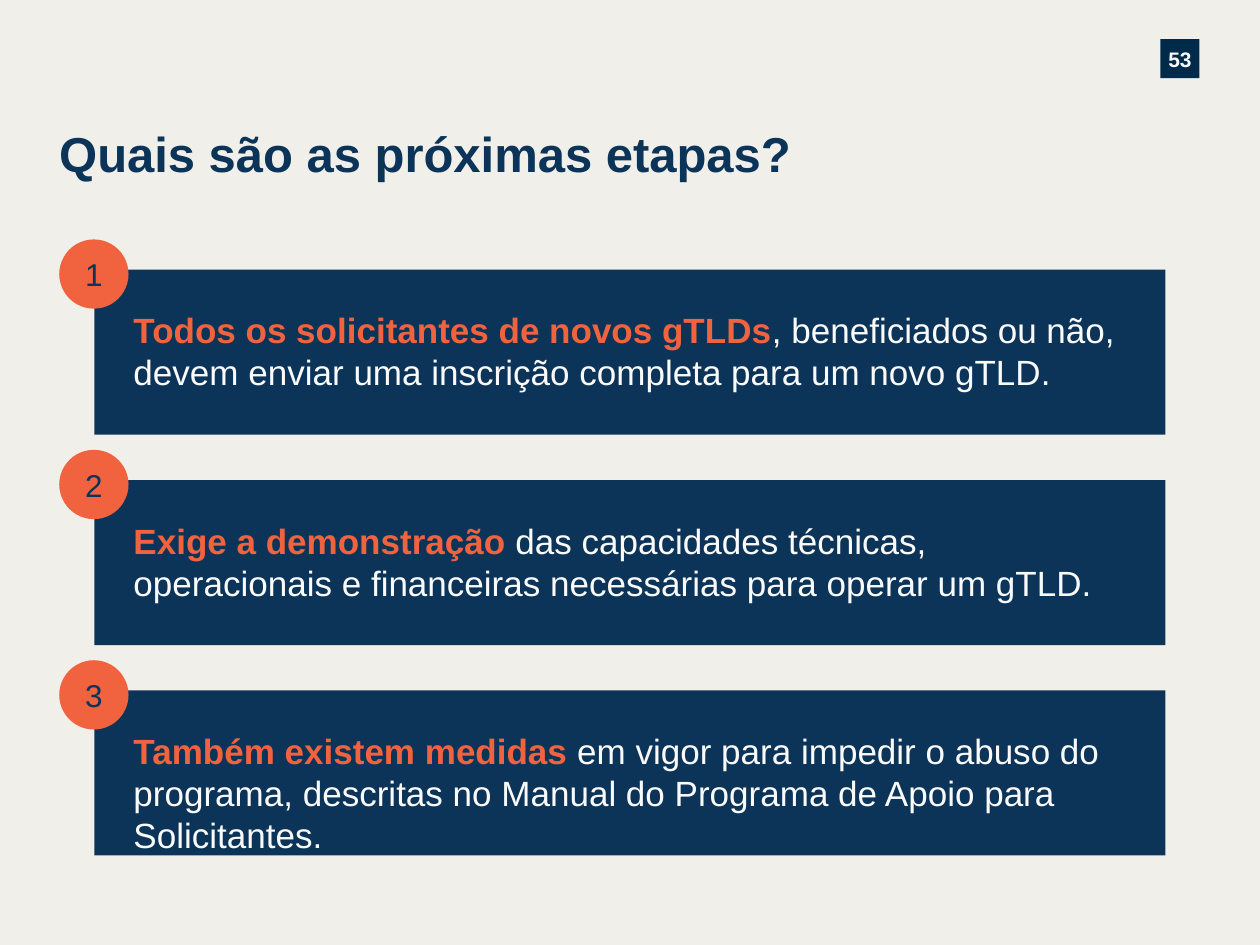
from dataclasses import dataclass

from pptx import Presentation
from pptx.dml.color import RGBColor
from pptx.enum import shapes, text
from pptx.util import Inches, Pt

NAVY = RGBColor(0x0B, 0x34, 0x58)
DARK = RGBColor(0x00, 0x2A, 0x49)
ORANGE = RGBColor(0xF1, 0x63, 0x3E)
WHITE = RGBColor(0xFA, 0xFA, 0xFA)
CREAM = RGBColor(0xF1, 0xEF, 0xEA)

FIRST_TOP = 2.14
STEP_PITCH = 1.67
BADGE_RISE = 0.24


@dataclass(frozen=True)
class Step:
    lead: str
    rest: str


STEPS = [
    Step("Todos os solicitantes de novos gTLDs",
         ", beneficiados ou não, devem enviar uma inscrição completa para um novo gTLD."),
    Step("Exige a demonstração",
         " das capacidades técnicas, operacionais e financeiras necessárias para operar um gTLD."),
    Step("Também existem medidas",
         " em vigor para impedir o abuso do programa, descritas no Manual do Programa de Apoio "
         "para Solicitantes."),
]


def set_margins(tf, left: float, top: float, right: float, bottom: float) -> None:
    tf.margin_left, tf.margin_top = Inches(left), Inches(top)
    tf.margin_right, tf.margin_bottom = Inches(right), Inches(bottom)


def set_font(font, size: float, color: RGBColor, bold: bool = False) -> None:
    font.name, font.size, font.bold = "Arial", Pt(size), bold
    font.color.rgb = color


def add_block(s, kind, left: float, top: float, width: float, height: float, fill: RGBColor):
    sp = s.shapes.add_shape(kind, Inches(left), Inches(top), Inches(width), Inches(height))
    sp.shadow.inherit = False
    sp.fill.solid()
    sp.fill.fore_color.rgb = fill
    sp.line.fill.background()
    return sp


def add_label(sp, label: str, size: float, color: RGBColor, bold: bool = False):
    tf = sp.text_frame
    tf.vertical_anchor = text.MSO_ANCHOR.MIDDLE
    p = tf.paragraphs[0]
    p.text = label
    p.alignment = text.PP_ALIGN.CENTER
    set_font(p.font, size, color, bold)
    return tf


def add_title(s, title: str) -> None:
    sp = s.shapes.add_textbox(Inches(0.47), Inches(0.98), Inches(5.88), Inches(0.58))
    tf = sp.text_frame
    tf.word_wrap = True
    set_margins(tf, 0, 0, 0, 0)
    p = tf.paragraphs[0]
    p.text = title
    set_font(p.font, 28, NAVY, True)


def add_step(s, number: int, step: Step) -> None:
    top = FIRST_TOP + (number - 1) * STEP_PITCH
    sp = add_block(s, shapes.MSO_SHAPE.RECTANGLE, 0.75, top, 8.5, 1.31, NAVY)
    tf = sp.text_frame
    tf.word_wrap = True
    tf.vertical_anchor = text.MSO_ANCHOR.TOP
    set_margins(tf, 0.31, 0.31, 0.35, 0.31)
    p = tf.paragraphs[0]
    p.alignment = text.PP_ALIGN.LEFT
    for words, color, bold in ((step.lead, ORANGE, True), (step.rest, WHITE, False)):
        r = p.add_run()
        r.text = words
        set_font(r.font, 20, color, bold)
    badge = add_block(s, shapes.MSO_SHAPE.OVAL, 0.47, top - BADGE_RISE, 0.55, 0.55, ORANGE)
    add_label(badge, str(number), 18, NAVY)


def main() -> None:
    prs = Presentation()
    prs.slide_width, prs.slide_height = Inches(10), Inches(7.5)
    s = prs.slides.add_slide(prs.slide_layouts[6])
    s.background.fill.solid()
    s.background.fill.fore_color.rgb = CREAM

    page = add_block(s, shapes.MSO_SHAPE.RECTANGLE, 9.21, 0.31, 0.31, 0.31, DARK)
    tf = add_label(page, "53", 12, WHITE, True)
    set_margins(tf, 0, 0, 0, 0)
    tf.paragraphs[0].line_spacing = 1.08

    add_title(s, "Quais são as próximas etapas?")
    for number, step in enumerate(STEPS, 1):
        add_step(s, number, step)
    prs.save("out.pptx")


if __name__ == "__main__":
    main()
